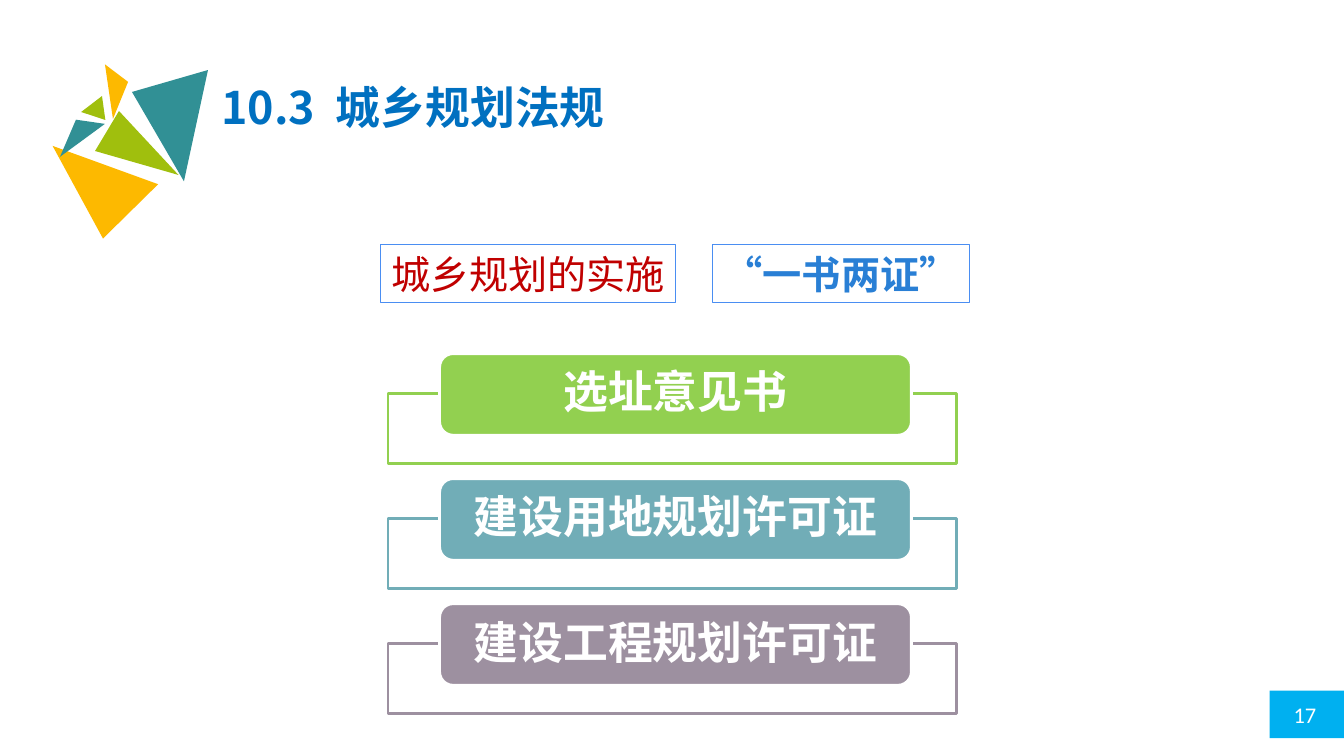
"""Build the slide on the three permits of urban and rural planning."""
from dataclasses import dataclass

from lxml.etree import SubElement
from pptx import Presentation
from pptx.dml.color import RGBColor
from pptx.enum.shapes import MSO_SHAPE
from pptx.enum.text import MSO_ANCHOR, PP_ALIGN
from pptx.oxml.ns import qn
from pptx.util import Pt


@dataclass(frozen=True)
class Theme:
    """Hold the colours, fonts and type sizes."""

    white: str = "FFFFFF"
    teal: str = "319095"
    lime: str = "A0BF0D"
    gold: str = "FDB900"
    title: str = "0070C0"
    frame: str = "4A8EF2"
    red: str = "C00000"
    blue: str = "297FD5"
    badge: str = "00B0F0"
    steps: tuple = ("92D050", "71ADB7", "9D90A0")
    body: str = "Calibri"
    head: str = "Noto Sans CJK SC"
    quote: str = "Arial"
    large: int = 32
    mid: int = 28
    small: int = 16


class Page:
    """Draw styled elements on one slide."""

    def __init__(self, slide, theme):
        """Keep the slide and its theme."""
        self.shapes = slide.shapes
        self.theme = theme

    def paint(self, shape, fill=None, line=None, width=1):
        """Set the fill and line and drop the shadow."""
        shape.shadow.inherit = False
        if fill:
            shape.fill.solid()
            shape.fill.fore_color.rgb = RGBColor.from_string(fill)
        else:
            shape.fill.background()
        if line:
            shape.line.color.rgb = RGBColor.from_string(line)
            shape.line.width = Pt(width)
        else:
            shape.line.fill.background()

    def box(self, kind, area, fill=None, line=None, width=1):
        """Add a preset shape."""
        shape = self.shapes.add_shape(kind, *map(Pt, area))
        self.paint(shape, fill, line, width)
        return shape

    def shard(self, points, fill):
        """Add a filled polygon."""
        start, *rest = [(Pt(x), Pt(y)) for x, y in points]
        pen = self.shapes.build_freeform(*start)
        pen.add_line_segments(rest, close=True)
        self.paint(pen.convert_to_shape(), fill)

    def letter(self, shape, text, size, color, face, bold=False, align=PP_ALIGN.CENTER):
        """Put one styled paragraph in a shape."""
        frame = shape.text_frame
        frame.word_wrap = False
        frame.vertical_anchor = MSO_ANCHOR.MIDDLE
        para = frame.paragraphs[0]
        para.text = text
        para.alignment = align
        font = para.font
        font.size, font.name, font.bold = Pt(size), face, bold
        font.color.rgb = RGBColor.from_string(color)
        return para

    def label(self, area, *style):
        """Add a left-aligned text box."""
        shape = self.shapes.add_textbox(*map(Pt, area))
        self.letter(shape, *style, align=PP_ALIGN.LEFT)
        shape.text_frame.vertical_anchor = MSO_ANCHOR.TOP

    def tag(self, left, width, *style):
        """Add a thinly framed heading."""
        shape = self.box(MSO_SHAPE.RECTANGLE, (left, 175, width, 41),
                         line=self.theme.frame, width=0.75)
        self.letter(shape, *style)

    def step(self, top, text, color):
        """Add a permit bar with the bracket behind it."""
        theme = self.theme
        back = self.box(MSO_SHAPE.RECTANGLE, (277.2, top + 28.6, 406, 49.7),
                        theme.white, color, 2)
        tint = back.element.spPr.find(".//" + qn("a:srgbClr"))
        SubElement(tint, qn("a:alpha")).set("val", "90000")
        bar = self.box(MSO_SHAPE.ROUNDED_RECTANGLE, (314, top, 337, 58.3),
                       color, theme.white, 2)
        para = self.letter(bar, text, theme.large, theme.white, theme.body, True)
        para.line_spacing = 0.9
        para.space_after = Pt(3)


def main():
    """Compose and save the slide."""
    deck = Presentation()
    deck.slide_width, deck.slide_height = Pt(960), Pt(540)
    theme = Theme()
    page = Page(deck.slides.add_slide(deck.slide_layouts[6]), theme)

    page.box(MSO_SHAPE.RECTANGLE, (907, 493.3, 53, 34), theme.badge)
    page.label((917, 497, 33, 27), "17", theme.small, theme.white, theme.body)

    shards = (
        (theme.teal, ((148.6, 50), (131.4, 129.5), (94.3, 65.7))),
        (theme.lime, ((85, 79.3), (127.5, 125), (67.9, 107.9))),
        (theme.gold, ((37.6, 104.2), (113, 131.6), (73.6, 170.4))),
        (theme.teal, ((54.3, 85.5), (75, 88.5), (42.9, 112))),
        (theme.lime, ((72.9, 68.6), (75.3, 85.7), (58, 80))),
        (theme.gold, ((75, 46), (91.5, 58.5), (80.7, 85))),
    )
    for color, points in shards:
        page.shard(points, color)

    page.label((151.2, 53.3, 297, 85), "10.3  城乡规划法规",
               theme.large, theme.title, theme.head, True)
    page.tag(272, 210.5, "城乡规划的实施", theme.mid, theme.red, theme.body)
    page.tag(509, 183.5, "“一书两证”", theme.mid, theme.blue, theme.quote, True)

    names = ("选址意见书", "建设用地规划许可证", "建设工程规划许可证")
    for index, (name, color) in enumerate(zip(names, theme.steps)):
        page.step(252.6 + 89.3 * index, name, color)
    deck.save("out.pptx")


if __name__ == "__main__":
    main()
